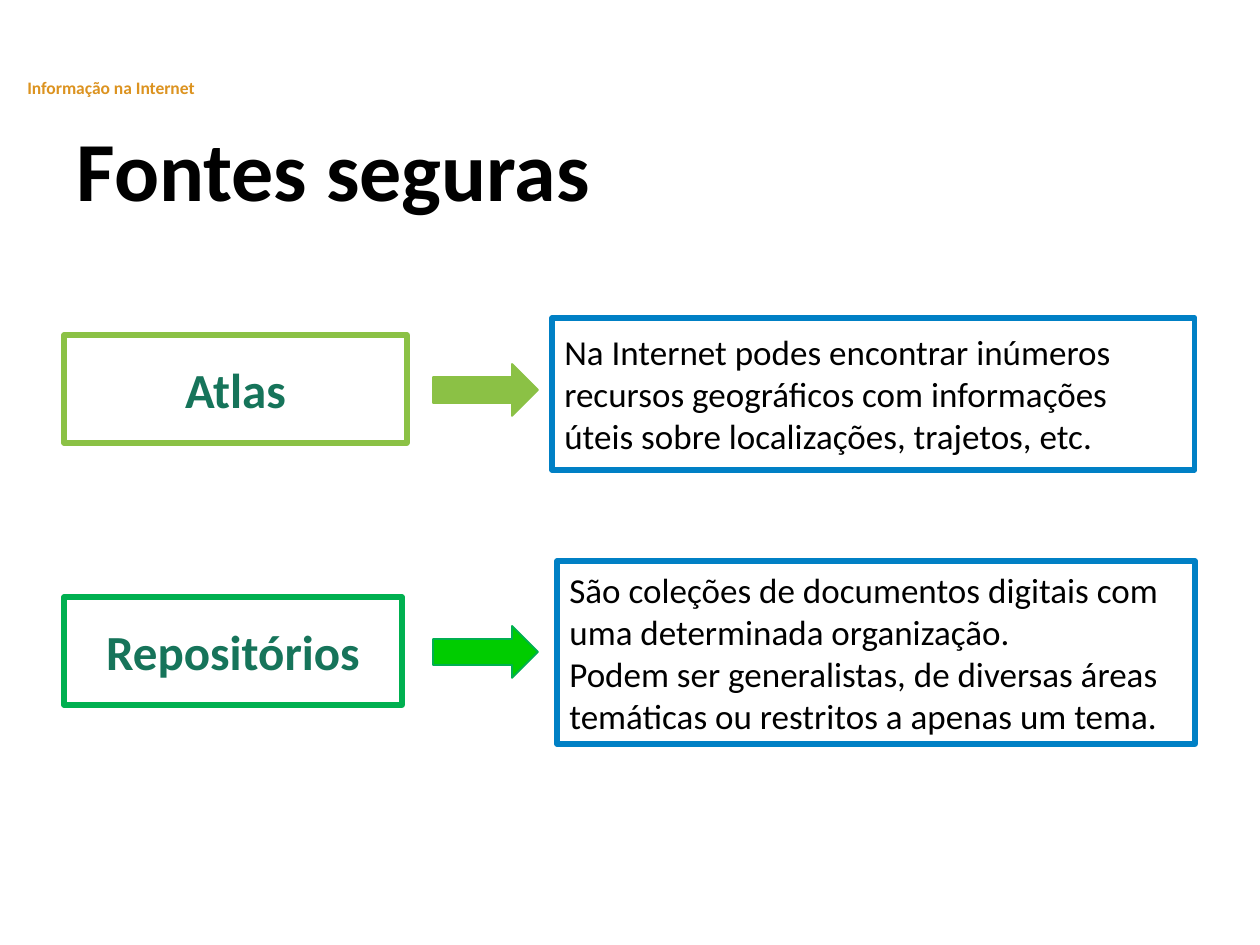
from pptx import Presentation
from pptx.dml.color import RGBColor
from pptx.enum.shapes import MSO_SHAPE
from pptx.enum.text import MSO_ANCHOR, PP_ALIGN
from pptx.util import Emu, Pt

EMU_PER_PX = 914400 // 126
BLACK, ORANGE, TEAL, BLUE = "000000", "DC9320", "16745A", "0080C5"
LIME, GREEN, BRIGHT_GREEN = "8BC145", "00B050", "00CC00"


def color(hex_value):
    return RGBColor.from_string(hex_value)


def place(*lengths):
    return [Emu(length * EMU_PER_PX) for length in lengths]


class SlideBuilder:
    font_name = "Calibri"

    def __init__(self, page):
        self.page = page

    def fill_text(self, shape, paragraphs, size, text_color, bold=False,
                  align=PP_ALIGN.LEFT, anchor=MSO_ANCHOR.TOP, spacing=1.0):
        frame = shape.text_frame
        frame.word_wrap = True
        frame.vertical_anchor = anchor
        font_format = {"name": self.font_name, "size": Pt(size), "bold": bold}
        for index, text in enumerate(paragraphs):
            para = frame.add_paragraph() if index else frame.paragraphs[0]
            para.alignment = align
            para.line_spacing = spacing
            span = para.add_run()
            span.text = text
            for name, value in font_format.items():
                setattr(span.font, name, value)
            span.font.color.rgb = color(text_color)

    def title(self, bounds, text):
        box = self.page.shapes.title
        for name, value in zip(("left", "top", "width", "height"), place(*bounds)):
            setattr(box, name, value)
        self.fill_text(box, [text], 48, BLACK, bold=True, spacing=0.9)

    def label(self, bounds, text):
        box = self.page.shapes.add_textbox(*place(*bounds))
        self.fill_text(box, [text], 10, ORANGE, bold=True, spacing=0.9)

    def shape(self, kind, bounds, line, line_width, fill=None):
        shape = self.page.shapes.add_shape(kind, *place(*bounds))
        shape.shadow.inherit = False
        if fill:
            shape.fill.solid()
            shape.fill.fore_color.rgb = color(fill)
        else:
            shape.fill.background()
        shape.line.color.rgb = color(line)
        shape.line.width = Pt(line_width)
        return shape

    def source_box(self, bounds, text, line):
        box = self.shape(MSO_SHAPE.RECTANGLE, bounds, line, 3)
        self.fill_text(box, [text], 28, TEAL, bold=True,
                       align=PP_ALIGN.CENTER, anchor=MSO_ANCHOR.MIDDLE)

    def arrow(self, bounds, fill, line):
        self.shape(MSO_SHAPE.RIGHT_ARROW, bounds, line, 1, fill)

    def description(self, bounds, paragraphs):
        box = self.shape(MSO_SHAPE.RECTANGLE, bounds, BLUE, 3)
        self.fill_text(box, paragraphs, 20, BLACK, anchor=MSO_ANCHOR.MIDDLE)


def main():
    deck = Presentation()
    deck.slide_width, deck.slide_height = place(1260, 945)
    builder = SlideBuilder(deck.slides.add_slide(deck.slide_layouts[5]))
    builder.title((64, 123, 908, 105), "Fontes seguras")
    builder.label((15, 73, 507, 53), "Informação na Internet")

    # name, top, width, line, arrow fill, description bounds, paragraphs
    sources = [
        ("Atlas", 335, 343, LIME, LIME, (552, 318, 643, 152),
         ["Na Internet podes encontrar inúmeros recursos geográficos "
          "com informações úteis sobre localizações, trajetos, etc."]),
        ("Repositórios", 597, 338, GREEN, BRIGHT_GREEN, (557, 561, 638, 183),
         ["São coleções de documentos digitais com uma determinada organização.",
          "Podem ser generalistas, de diversas áreas temáticas "
          "ou restritos a apenas um tema."]),
    ]
    for name, top, width, line, arrow_fill, bounds, paragraphs in sources:
        builder.source_box((64, top, width, 108), name, line)
        builder.arrow((433, top + 29, 105, 52), arrow_fill, line)
        builder.description(bounds, paragraphs)

    deck.save("out.pptx")


if __name__ == "__main__":
    main()
